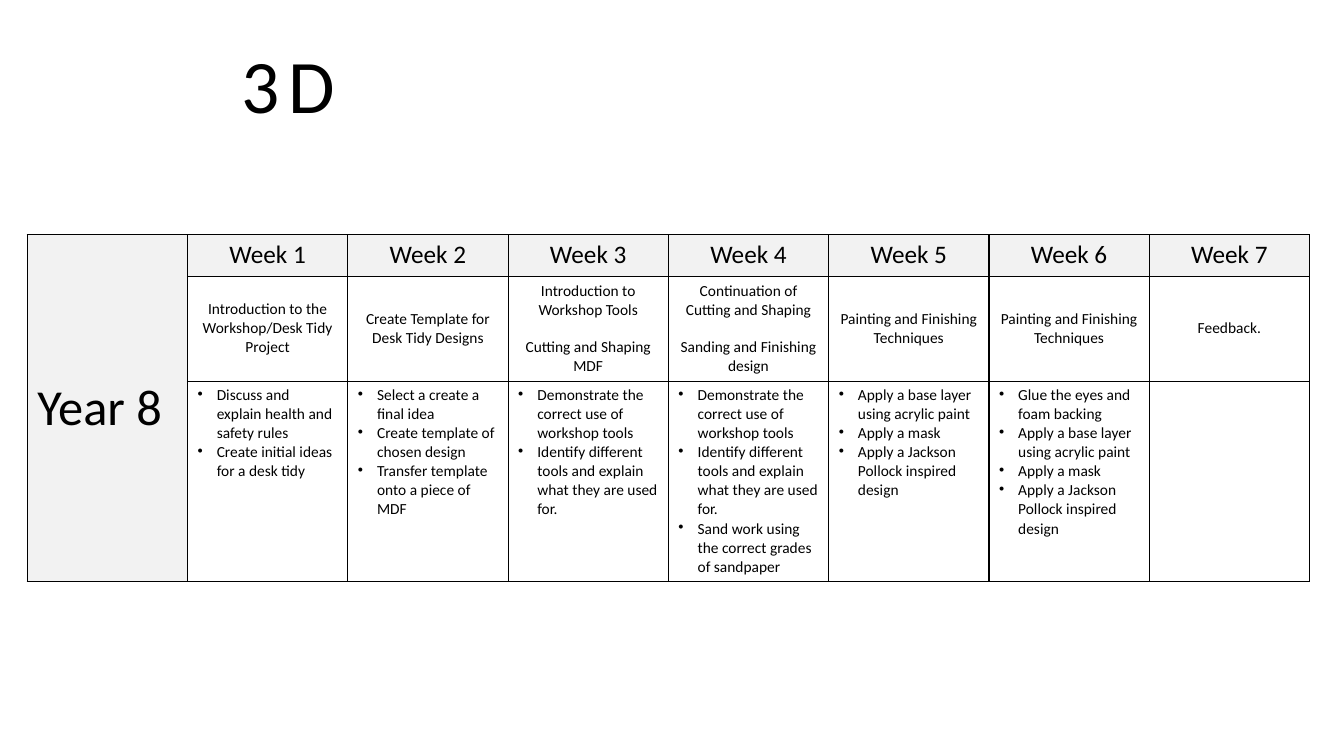
from dataclasses import dataclass

from lxml.etree import SubElement
from pptx import Presentation
from pptx.dml.color import RGBColor
from pptx.enum.text import MSO_ANCHOR as Anchor, PP_ALIGN as Align
from pptx.oxml import parse_xml
from pptx.oxml.ns import nsdecls, qn
from pptx.table import _Cell as Cell
from pptx.text.text import TextFrame as Frame
from pptx.util import Inches, Pt

FONT = "Calibri"
BLACK, WHITE, GREY = "000000", "FFFFFF", "F2F2F2"
COL = 1.59
ROWS = [0.41, 1.04, 1.98]


@dataclass
class Week:
    topics: list[str]
    tasks: list[str]


TOOLS = [
    "Demonstrate the correct use of workshop tools",
    "Identify different tools and explain what they are used for.",
]
PAINT = [
    "Apply a base layer using acrylic paint",
    "Apply a mask",
    "Apply a Jackson Pollock inspired design",
]
FINISH = ["Painting and Finishing Techniques"]
WEEKS = [
    Week(["Introduction to the Workshop/Desk Tidy Project"],
         ["Discuss and explain health and safety rules",
          "Create initial ideas for a desk tidy"]),
    Week(["Create Template for Desk Tidy Designs"],
         ["Select a create a final idea",
          "Create template of chosen design",
          "Transfer template onto a piece of MDF"]),
    Week(["Introduction to Workshop Tools", "Cutting and Shaping MDF"], TOOLS),
    Week(["Continuation of Cutting and Shaping", "Sanding and Finishing design"],
         TOOLS + ["Sand work using the correct grades of sandpaper"]),
    Week(FINISH, PAINT),
    Week(FINISH, ["Glue the eyes and foam backing"] + PAINT),
    Week(["Feedback."], []),
]


def tint(code: str) -> RGBColor:
    return RGBColor.from_string(code)


def write(frame: Frame, lines: list[str], size: float,
          align: Align = Align.LEFT, gap: float = 0) -> None:
    frame.text = "\n".join(lines)
    for i, para in enumerate(frame.paragraphs):
        para.alignment = align
        if i and gap:
            para.space_before = Pt(gap)
        for font in [para.font] + [run.font for run in para.runs]:
            font.size = Pt(size)
            font.name = FONT
            font.color.rgb = tint(BLACK)


def bullet(frame: Frame) -> None:
    for para in frame.paragraphs:
        props = para._p.get_or_add_pPr()
        props.set("marL", str(Inches(0.19)))
        props.set("indent", str(-Inches(0.19)))
        mark = parse_xml(f'<a:buChar {nsdecls("a")} char="•"/>')
        props.insert_element_before(mark, "a:tabLst", "a:defRPr", "a:extLst")


def style(cell: Cell, fill: str) -> None:
    cell.fill.solid()
    cell.fill.fore_color.rgb = tint(fill)
    props = cell._tc.get_or_add_tcPr()
    for i, side in enumerate("LRTB"):
        line = parse_xml(f'<a:ln{side} {nsdecls("a")} w="{Pt(1)}"/>')
        solid = SubElement(line, qn("a:solidFill"))
        SubElement(solid, qn("a:srgbClr")).set("val", BLACK)
        props.insert(i, line)


def main() -> None:
    deck = Presentation()
    deck.slide_width, deck.slide_height = Inches(13.33), Inches(7.5)
    slide = deck.slides.add_slide(deck.slide_layouts[6])

    count = len(WEEKS) + 1
    table = slide.shapes.add_table(
        len(ROWS), count, Inches(0.27), Inches(2.33),
        Inches(COL * count), Inches(sum(ROWS))).table
    table.first_row = table.horz_banding = False
    for col in table.columns:
        col.width = Inches(COL)
    for row, height in zip(table.rows, ROWS):
        row.height = Inches(height)
    for r in range(len(ROWS)):
        for c in range(count):
            style(table.cell(r, c), GREY if r == 0 or c == 0 else WHITE)

    year = table.cell(0, 0)
    year.merge(table.cell(len(ROWS) - 1, 0))
    year.vertical_anchor = Anchor.MIDDLE
    write(year.text_frame, ["Year 8"], 36)

    for c, week in enumerate(WEEKS, 1):
        head, topic, task = (table.cell(r, c) for r in range(len(ROWS)))
        write(head.text_frame, [f"Week {c}"], 18, Align.CENTER)
        topic.vertical_anchor = Anchor.MIDDLE
        write(topic.text_frame, week.topics, 11, Align.CENTER, 13.4)
        write(task.text_frame, week.tasks, 11)
        if week.tasks:
            bullet(task.text_frame)

    title = slide.shapes.add_textbox(
        Inches(2.3), Inches(0.33), Inches(6.75), Inches(1.01)).text_frame
    title.word_wrap = True
    write(title, ["3D"], 54)
    title.paragraphs[0].runs[0].font._element.set("spc", "600")

    deck.save("out.pptx")


if __name__ == "__main__":
    main()
